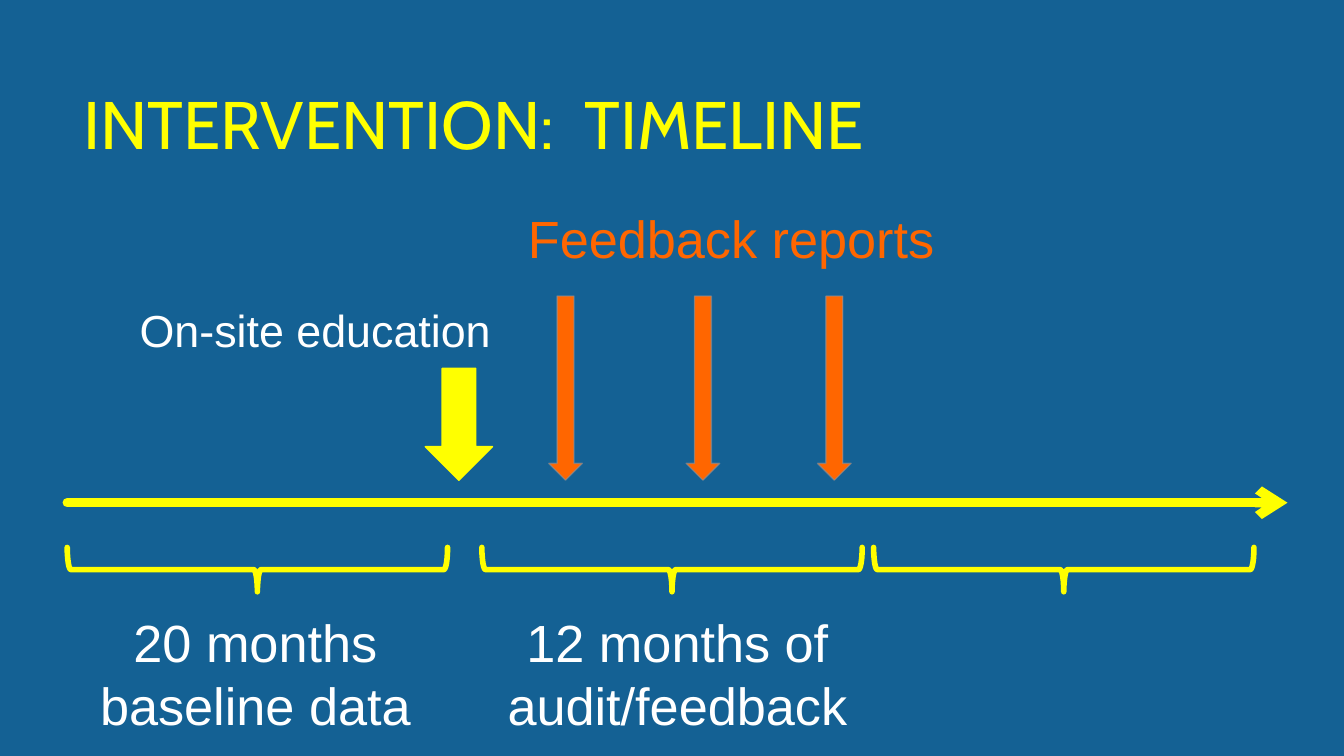
"""Build the intervention timeline slide."""
from pptx import Presentation
from pptx.dml.color import RGBColor as RGB
from pptx.enum.shapes import MSO_CONNECTOR as CONN, MSO_SHAPE as SHAPE
from pptx.enum.text import MSO_ANCHOR as ANCHOR, MSO_AUTO_SIZE as FIT, PP_ALIGN as ALIGN
from pptx.oxml.ns import qn
from pptx.util import Inches, Pt
from lxml.etree import SubElement

C = {"blue": "146194", "yellow": "FFFF00", "orange": "FF6600", "white": "FFFFFF", "gray": "89919C"}

prs = Presentation()
prs.slide_width = Inches(10)
prs.slide_height = prs.slide_width * 9 // 16
s = prs.slides.add_slide(prs.slide_layouts[6])
s.background.fill.solid()
s.background.fill.fore_color.rgb = RGB.from_string(C["blue"])
col, row = prs.slide_width / 100, prs.slide_height / 100


def add_text(text, x, y, w, h, size=28, font="Arial", color="white", align=ALIGN.LEFT,
             anchor=ANCHOR.TOP, wrap=False, inset=(0.1, 0.05)):
    tf = s.shapes.add_textbox(int(x * col), int(y * row), int(w * col), int(h * row)).text_frame
    tf.word_wrap, tf.vertical_anchor = wrap, anchor
    tf.auto_size = FIT.NONE if wrap else FIT.SHAPE_TO_FIT_TEXT
    tf.margin_left = tf.margin_right = Inches(inset[0])
    tf.margin_top = tf.margin_bottom = Inches(inset[1])
    for i, words in enumerate(text.split("\n")):
        p = tf.paragraphs[0] if i == 0 else tf.add_paragraph()
        p.alignment = align
        r = p.add_run()
        r.text = words
        r.font.size, r.font.name = Pt(size), font
        r.font.color.rgb = RGB.from_string(C[color])


def outline(sp, color, width, cap="flat"):
    sp.line.color.rgb = RGB.from_string(C[color])
    sp.line.width = Pt(width)
    spPr = sp._element.spPr
    ln = spPr.find(qn("a:ln"))
    ln.set("cap", cap)
    SubElement(spPr, qn("a:effectLst"))
    return ln


add_text("INTERVENTION:  TIMELINE", 5.5, 5.16, 88.6, 22.04, size=36, font="Cabin", color="yellow",
         anchor=ANCHOR.MIDDLE, wrap=True, inset=(0.07, 0.04))

axis_y = int(66.5 * row)
axis = s.shapes.add_connector(CONN.STRAIGHT, int(5 * col), axis_y, int(95.8 * col), axis_y)
SubElement(outline(axis, "yellow", 5, "rnd"), qn("a:tailEnd")).set("type", "arrow")

depth, span = 3.3 * col, 28.3 * col
for center in (19.15, 50, 79.15):
    brace = s.shapes.add_shape(SHAPE.RIGHT_BRACE, int(center * col - depth / 2),
                               int(75.35 * row - span / 2), int(depth), int(span))
    brace.rotation = 90
    brace.fill.background()
    outline(brace, "yellow", 3, "rnd")

arrow_tip = 63.53
arrows = [(31.65, 5, 14.8, "yellow", "yellow")]
arrows += [(x, 2.5, 24.36, "orange", "gray") for x in (40.83, 51.05, 60.83)]
for x, w, h, fill, edge in arrows:
    arrow = s.shapes.add_shape(SHAPE.DOWN_ARROW, int(x * col), int((arrow_tip - h) * row),
                               int(w * col), int(h * row))
    arrow.fill.solid()
    arrow.fill.fore_color.rgb = RGB.from_string(C[fill])
    ln = outline(arrow, edge, 0.75)
    if edge == "gray":
        SubElement(ln.find(".//" + qn("a:srgbClr")), qn("a:alpha")).set("val", "60000")

add_text("12 months of\naudit/feedback", 36.6, 79.9, 27.6, 18.5, align=ALIGN.CENTER)
add_text("20 months\nbaseline data", 6.3, 79.9, 25.4, 18.5, align=ALIGN.CENTER)
add_text("On-site education", 9.4, 39.18, 28.2, 8.9, size=24)
add_text("Feedback reports", 38.3, 26.42, 32.6, 10.13, color="orange")

prs.save("out.pptx")
